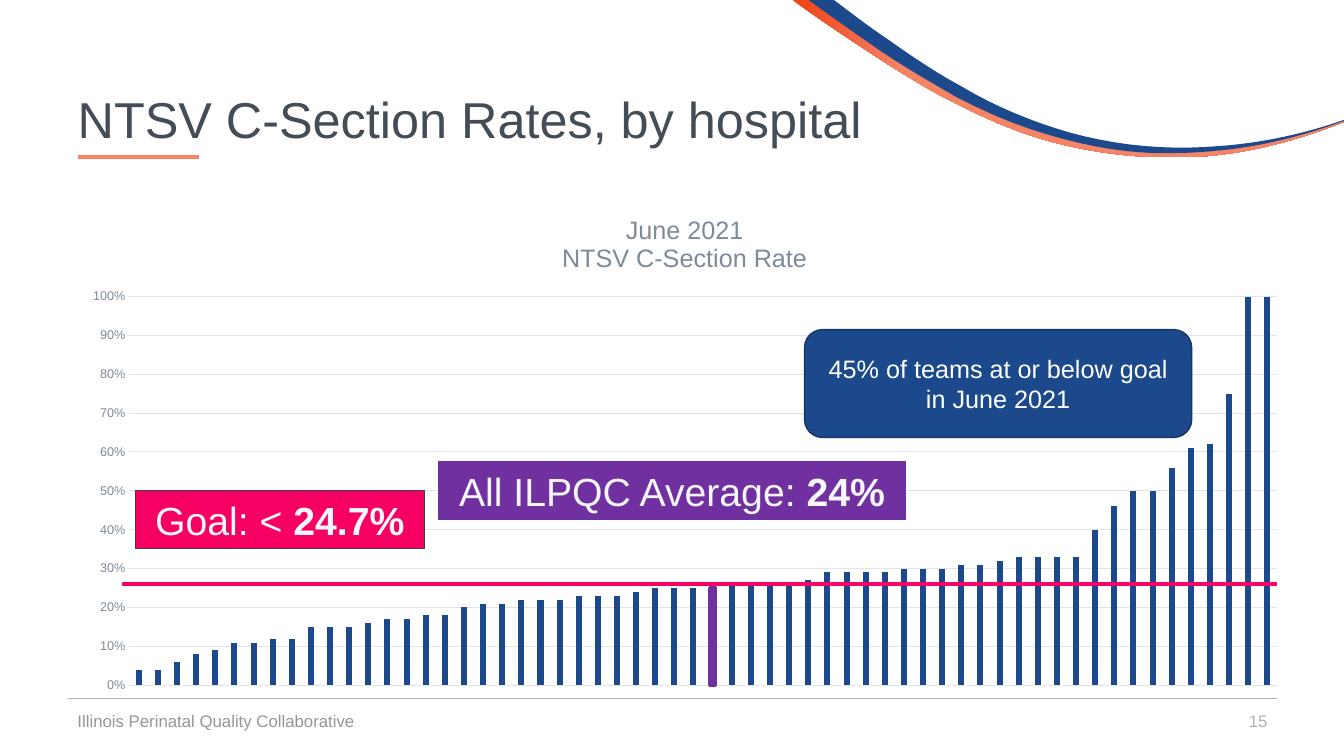
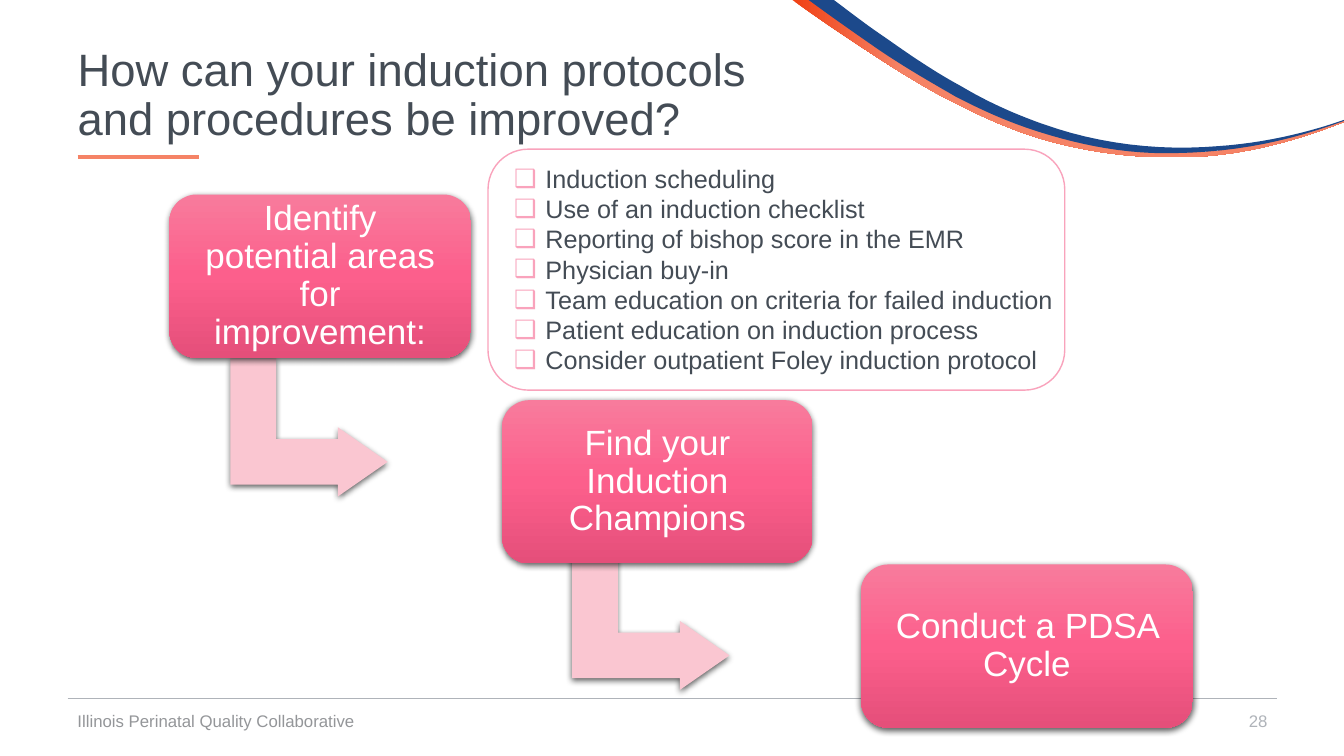
"""Build two slides on C-section rates and induction protocols."""
from copy import deepcopy

from lxml import etree
from pptx import Presentation
from pptx.chart.data import CategoryChartData
from pptx.dml.color import RGBColor
from pptx.enum.chart import XL_CHART_TYPE, XL_TICK_MARK
from pptx.enum.shapes import MSO_CONNECTOR, MSO_SHAPE
from pptx.enum.text import MSO_ANCHOR, MSO_AUTO_SIZE, PP_ALIGN
from pptx.oxml import parse_xml
from pptx.oxml.ns import nsdecls, qn
from pptx.util import Inches, Pt

COLUMN_CLUSTERED = XL_CHART_TYPE.COLUMN_CLUSTERED
NO_TICKS = XL_TICK_MARK.NONE
STRAIGHT = MSO_CONNECTOR.STRAIGHT
RECTANGLE, ROUNDED = MSO_SHAPE.RECTANGLE, MSO_SHAPE.ROUNDED_RECTANGLE
BENT_ARROW = MSO_SHAPE.BENT_UP_ARROW
TOP, MIDDLE = MSO_ANCHOR.TOP, MSO_ANCHOR.MIDDLE
NO_AUTOFIT = MSO_AUTO_SIZE.NONE
LEFT, CENTER, RIGHT = PP_ALIGN.LEFT, PP_ALIGN.CENTER, PP_ALIGN.RIGHT

FONT = "Arial"
HEX = {
    "text": "444C55", "axis": "7E8A98", "grid": "E1E4E7", "footer": "949699",
    "number": "AFB3B9", "white": "FFFFFF", "label": "F4F6FA",
    "navy": "1C498B", "navy_edge": "153667", "purple": "7030A0",
    "goal": "F60064", "goal_edge": "3C4045", "orange": "F04115", "coral": "F58366",
    "pink_top": "F87B9C", "pink": "FC5F8C", "pink_bottom": "E54F7A",
    "pale_pink": "FAC6D1", "pink_edge": "F9A3BC",
}
COLORS = {name: RGBColor.from_string(value) for name, value in HEX.items()}


def write(shape, text, size, color, alignment=LEFT, anchor=MIDDLE, bold_tail="", spacing=1.0):
    """Put one formatted paragraph in a shape, with an optional bold ending."""
    frame = shape.text_frame
    frame.word_wrap = True
    frame.auto_size = NO_AUTOFIT
    frame.vertical_anchor = anchor
    paragraph = frame.paragraphs[0]
    paragraph.text = text
    paragraph.alignment = alignment
    paragraph.line_spacing = spacing
    if bold_tail:
        run = paragraph.add_run()
        run.text = bold_tail
        run.font.bold = True
    for run in paragraph.runs:
        run.font.name = FONT
        run.font.size = Pt(size)
        run.font.color.rgb = COLORS[color]


def fill_gradient(shape, stops, angle):
    """Fill a shape with (position, color) stops."""
    shape.fill.gradient()
    shape.fill.gradient_angle = angle
    stop_list = shape.element.spPr.find(".//" + qn("a:gsLst"))
    while len(stop_list) < len(stops):
        stop_list.append(deepcopy(stop_list[0]))
    for stop, (position, color) in zip(shape.fill.gradient_stops, stops):
        stop.position = position
        stop.color.rgb = COLORS[color]


presentation = Presentation()
presentation.slide_width = Inches(13.33)
presentation.slide_height = Inches(7.5)
rate_slide = presentation.slides.add_slide(presentation.slide_layouts[5])
protocol_slide = presentation.slides.add_slide(presentation.slide_layouts[1])

# Each ribbon edge is a start point followed by cubic curve segments.
RIBBONS = [
    [
        [(8.05, 0), (8.3, 0.18, 8.56, 0.37, 8.82, 0.54), (9.07, 0.71, 9.32, 0.86, 9.58, 0.99),
         (9.84, 1.13, 10.11, 1.24, 10.39, 1.33), (10.8, 1.46, 11.25, 1.52, 11.68, 1.52),
         (12.2, 1.52, 12.8, 1.4, 13.33, 1.2)],
        [(13.33, 1.21), (12.8, 1.42, 12.25, 1.56, 11.69, 1.56),
         (11.25, 1.57, 10.8, 1.51, 10.37, 1.39), (10.09, 1.31, 9.81, 1.19, 9.55, 1.06),
         (9.28, 0.93, 9.03, 0.78, 8.78, 0.62), (8.47, 0.42, 8.17, 0.22, 7.86, 0)],
    ],
    [
        [(8.27, 0), (8.43, 0.12, 8.61, 0.26, 8.79, 0.38), (9.03, 0.55, 9.28, 0.72, 9.54, 0.86),
         (9.79, 1.01, 10.06, 1.13, 10.34, 1.23), (10.9, 1.43, 11.5, 1.5, 12.09, 1.45),
         (12.51, 1.42, 12.93, 1.33, 13.33, 1.19)],
        [(13.33, 1.2), (12.81, 1.39, 12.3, 1.51, 11.64, 1.52),
         (11.19, 1.53, 10.75, 1.45, 10.31, 1.31), (10.02, 1.22, 9.75, 1.1, 9.48, 0.96),
         (9.22, 0.81, 8.96, 0.66, 8.71, 0.49), (8.48, 0.33, 8.25, 0.17, 8.02, 0)],
    ],
]
CURVE_STEPS = 12
decorations = []
for edges in RIBBONS:
    points = []
    for (x, y), *curves in edges:
        points.append((Inches(x), Inches(y)))
        for x1, y1, x2, y2, x3, y3 in curves:
            for step in range(1, CURVE_STEPS + 1):
                t = step / CURVE_STEPS
                a, b, c, d = (1 - t) ** 3, 3 * t * (1 - t) ** 2, 3 * t * t * (1 - t), t ** 3
                points.append((Inches(a * x + b * x1 + c * x2 + d * x3),
                               Inches(a * y + b * y1 + c * y2 + d * y3)))
            x, y = x3, y3
    builder = rate_slide.shapes.build_freeform(*points[0])
    builder.add_line_segments(points[1:], close=True)
    ribbon = builder.convert_to_shape()
    ribbon.shadow.inherit = False
    ribbon.line.fill.background()
    decorations.append(ribbon)
fill_gradient(decorations[0], [(0, "orange"), (0.2, "coral")], 0)
decorations[1].fill.solid()
decorations[1].fill.fore_color.rgb = COLORS["navy"]

RULES = [
    (0.67, 12.67, 6.93, "number", 0.5),
    (0.77, 1.97, 1.56, "coral", 2.5),
    (1.21, 12.67, 5.79, "goal", 3),
]
rules = []
for start, end, y, color, width in RULES:
    rule = rate_slide.shapes.add_connector(STRAIGHT, Inches(start), Inches(y), Inches(end), Inches(y))
    rule.line.color.rgb = COLORS[color]
    rule.line.width = Pt(width)
    etree.SubElement(rule.element.spPr, qn("a:effectLst"))
    rules.append(rule)
footer_rule, title_rule, goal_line = rules

master_tree = presentation.slide_master.element.cSld.spTree
for number, shape in enumerate(decorations + [footer_rule, title_rule], start=101):
    shape.element.xpath(".//p:cNvPr")[0].set("id", str(number))
    master_tree.append(shape.element)

PAGES = [
    (rate_slide, "NTSV C-Section Rates, by hospital", 36, (0.67, 0.49, 12, 1.45), "15"),
    (protocol_slide, "How can your induction protocols and procedures be improved?", 32.4,
     (0.67, 0.23, 7.28, 1.45), "28"),
]
for slide, title_text, size, box, number in PAGES:
    title = slide.shapes.title
    title.left, title.top, title.width, title.height = map(Inches, box)
    write(title, title_text, size, "text", spacing=0.9)
    page_number = slide.shapes.add_textbox(Inches(9.67), Inches(6.95), Inches(3), Inches(0.4))
    write(page_number, number, 12, "number", RIGHT)
    footer = slide.shapes.add_textbox(Inches(0.67), Inches(6.95), Inches(4.5), Inches(0.4))
    write(footer, "Illinois Perinatal Quality Collaborative", 12, "footer")

RATES = [
    0.04, 0.04, 0.06, 0.08, 0.09, 0.11, 0.11, 0.12, 0.12, 0.15, 0.15, 0.15, 0.16, 0.17, 0.17,
    0.18, 0.18, 0.2, 0.21, 0.21, 0.22, 0.22, 0.22, 0.23, 0.23, 0.23, 0.24, 0.25, 0.25, 0.25,
    0.25, 0.26, 0.26, 0.26, 0.26, 0.27, 0.29, 0.29, 0.29, 0.29, 0.3, 0.3, 0.3, 0.31, 0.31,
    0.32, 0.33, 0.33, 0.33, 0.33, 0.4, 0.46, 0.5, 0.5, 0.56, 0.61, 0.62, 0.75, 1, 1,
]
AVERAGE_INDEX = 30
chart_data = CategoryChartData(number_format="0%")
chart_data.categories = [str(hospital) for hospital in range(1, len(RATES) + 1)]
chart_data.add_series("Series 1", RATES)
chart = rate_slide.shapes.add_chart(
    COLUMN_CLUSTERED, Inches(0.67), Inches(1.94), Inches(12.24), Inches(5.01), chart_data).chart
chart.has_legend = False
chart.font.name = FONT
chart.font.size = Pt(10)
chart.font.color.rgb = COLORS["text"]
chart.has_title = True
chart.chart_title.include_in_layout = False
title_frame = chart.chart_title.text_frame
title_frame.text = "June 2021\nNTSV C-Section Rate"
for paragraph in title_frame.paragraphs:
    for run in paragraph.runs:
        run.font.name = FONT
        run.font.size = Pt(18)
        run.font.bold = False
        run.font.color.rgb = COLORS["axis"]
chart.category_axis.visible = False
value_axis = chart.value_axis
value_axis.minimum_scale, value_axis.maximum_scale, value_axis.major_unit = 0, 1, 0.1
value_axis.major_tick_mark = NO_TICKS
value_axis.format.line.fill.background()
value_axis.major_gridlines.format.line.color.rgb = COLORS["grid"]
value_axis.major_gridlines.format.line.width = Pt(0.75)
value_axis.tick_labels.number_format = "0%"
value_axis.tick_labels.number_format_is_linked = False
value_axis.tick_labels.font.name = FONT
value_axis.tick_labels.font.size = Pt(9)
value_axis.tick_labels.font.color.rgb = COLORS["axis"]
plot = chart.plots[0]
plot.gap_width, plot.overlap, plot.vary_by_categories = 219, -27, False
series = plot.series[0]
series.format.fill.solid()
series.format.fill.fore_color.rgb = COLORS["navy"]
average_bar = series.points[AVERAGE_INDEX].format
average_bar.fill.solid()
average_bar.fill.fore_color.rgb = COLORS["purple"]
average_bar.line.color.rgb = COLORS["purple"]
average_bar.line.width = Pt(2.25)
plot_area = chart.element.find(".//" + qn("c:plotArea"))
for old_layout in plot_area.findall(qn("c:layout")):
    plot_area.remove(old_layout)
plot_area.insert(0, parse_xml(
    f'<c:layout {nsdecls("c")}><c:manualLayout><c:layoutTarget val="inner"/>'
    '<c:xMode val="edge"/><c:yMode val="edge"/><c:x val="0.05"/><c:y val="0.2"/>'
    '<c:w val="0.93"/><c:h val="0.77"/></c:manualLayout></c:layout>'))
rate_slide.shapes.element.append(goal_line.element)

CALLOUTS = [
    (RECTANGLE, (1.34, 4.87, 2.87, 0.57), "goal", "goal_edge", 0.75, "Goal: < ", "24.7%", 28, "label"),
    (ROUNDED, (7.98, 3.27, 3.84, 1.07), "navy", "navy_edge", 1,
     "45% of teams at or below goal in June 2021", "", 18, "white"),
    (RECTANGLE, (4.35, 4.58, 4.63, 0.57), "purple", "purple", 0.75,
     "All ILPQC Average: ", "24%", 28, "label"),
]
for kind, box, fill, edge, width, text, bold_tail, size, color in CALLOUTS:
    callout = rate_slide.shapes.add_shape(kind, *map(Inches, box))
    callout.shadow.inherit = False
    callout.fill.solid()
    callout.fill.fore_color.rgb = COLORS[fill]
    callout.line.color.rgb = COLORS[edge]
    callout.line.width = Pt(width)
    write(callout, text, size, color, CENTER, bold_tail=bold_tail)

STEPS = [
    ("Identify potential areas for improvement:", (1.68, 1.93, 2.99, 1.62), (2.38, 3.46)),
    ("Find your Induction Champions", (4.98, 3.97, 3.08, 1.62), (5.77, 5.38)),
    ("Conduct a PDSA Cycle", (8.54, 5.6, 3.29, 1.62), None),
]
SHADOW = (f'<a:outerShdw {nsdecls("a")} blurRad="57150" dist="19050" dir="5400000" '
          'algn="ctr" rotWithShape="0"><a:srgbClr val="000000"><a:alpha val="63000"/>'
          '</a:srgbClr></a:outerShdw>')
for text, box, arrow_corner in STEPS:
    step_shapes = []
    if arrow_corner:
        arrow = protocol_slide.shapes.add_shape(
            BENT_ARROW, *map(Inches, arrow_corner), Inches(1.37), Inches(1.56))
        arrow.rotation = 90
        for index, value in enumerate((0.33, 0.25, 0.36)):
            arrow.adjustments[index] = value
        arrow.fill.solid()
        arrow.fill.fore_color.rgb = COLORS["pale_pink"]
        step_shapes.append(arrow)
    step_box = protocol_slide.shapes.add_shape(ROUNDED, *map(Inches, box))
    fill_gradient(step_box, [(0, "pink_top"), (0.5, "pink"), (1, "pink_bottom")], 270)
    write(step_box, text, 25, "white", CENTER, spacing=0.9)
    step_box.text_frame.margin_left = step_box.text_frame.margin_right = Inches(0.18)
    step_shapes.append(step_box)
    for shape in step_shapes:
        shape.line.fill.background()
        shape.shadow.inherit = False
        shape.element.spPr.find(qn("a:effectLst")).append(parse_xml(SHADOW))

AREAS = [
    "Induction scheduling", "Use of an induction checklist",
    "Reporting of bishop score in the EMR", "Physician buy-in",
    "Team education on criteria for failed induction",
    "Patient education on induction process", "Consider outpatient Foley induction protocol",
]
area_list = protocol_slide.placeholders[1]
area_list.left, area_list.top, area_list.width, area_list.height = map(Inches, (5, 1.57, 5.56, 2.22))
area_frame = area_list.text_frame
area_frame.text = "\n".join(AREAS)
area_frame.auto_size = NO_AUTOFIT
area_frame.vertical_anchor = TOP
for paragraph in area_frame.paragraphs:
    properties = paragraph._p.get_or_add_pPr()
    properties.set("marL", str(Inches(0.31)))
    properties.set("indent", str(-Inches(0.31)))
    bullet_color = etree.SubElement(properties, qn("a:buClr"))
    etree.SubElement(bullet_color, qn("a:srgbClr"), val=HEX["pink_edge"])
    etree.SubElement(properties, qn("a:buChar"), char="❑")
    paragraph.space_before = Pt(0)
    paragraph.line_spacing = 1.0
    paragraph.font.name = FONT
    paragraph.font.size = Pt(18)
    paragraph.font.color.rgb = COLORS["text"]

list_frame = protocol_slide.shapes.add_shape(ROUNDED, *map(Inches, (4.84, 1.48, 5.72, 2.39)))
list_frame.shadow.inherit = False
list_frame.fill.background()
list_frame.line.color.rgb = COLORS["pink_edge"]
list_frame.line.width = Pt(1)

presentation.save("out.pptx")
